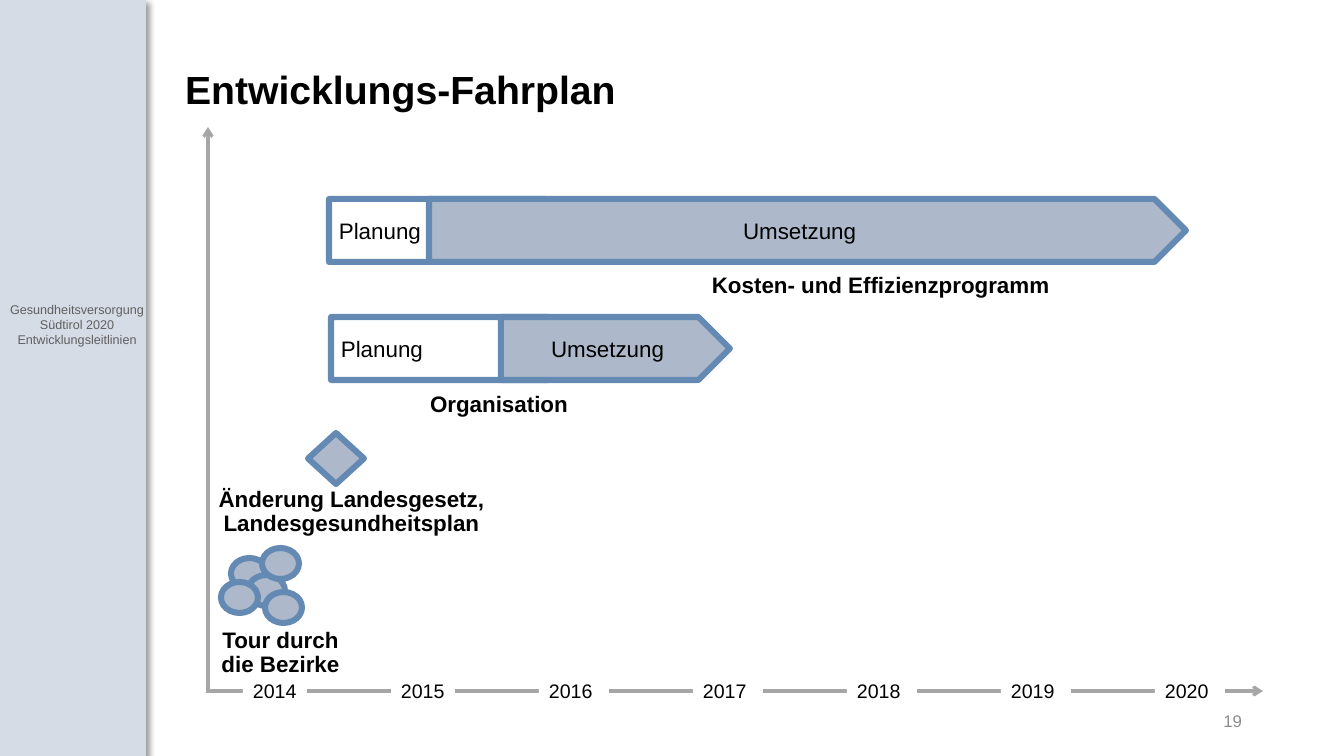
"""Build the roadmap slide of the development guidelines."""
from dataclasses import dataclass
from typing import Optional

from lxml.etree import SubElement
from pptx import Presentation
from pptx.dml.color import RGBColor
from pptx.enum.shapes import MSO_CONNECTOR, MSO_SHAPE as Geometry
from pptx.enum.text import MSO_ANCHOR as Anchor, MSO_AUTO_SIZE as AutoSize, PP_ALIGN as Align
from pptx.oxml.ns import qn
from pptx.shapes.autoshape import Shape
from pptx.shapes.shapetree import SlideShapes
from pptx.util import Emu, Pt

EMU_PER_PX = 12192000 / 1344


@dataclass(frozen=True)
class Theme:
    font: str = "Arial"
    ink: str = "000000"
    paper: str = "FFFFFF"
    sidebar: str = "D6DCE5"
    sidebar_ink: str = "5F5F5F"
    page_ink: str = "8C8C8C"
    axis: str = "A6A6A6"
    fill: str = "ADB9CA"
    outline: str = "648AB4"
    title_size: int = 28
    body_size: int = 16
    year_size: int = 14
    page_size: int = 12
    sidebar_size: int = 9
    outline_width: float = 4.33
    axis_width: float = 2.25
    label_leading: int = 17


THEME = Theme()


@dataclass(frozen=True)
class Box:
    left: int
    top: int
    width: int
    height: int

    def emu(self) -> tuple[Emu, ...]:
        return tuple(map(px, (self.left, self.top, self.width, self.height)))


@dataclass(frozen=True)
class Phase:
    text: str
    box: Box
    fill: Optional[str]
    align: Align


@dataclass(frozen=True)
class Label:
    text: str
    box: Box
    align: Align = Align.CENTER


@dataclass(frozen=True)
class Axis:
    tip: tuple[int, int]
    origin: tuple[int, int]


PHASES = [
    Phase("Planung", Box(329, 199, 248, 63), None, Align.LEFT),
    Phase("Umsetzung", Box(429, 199, 757, 63), THEME.fill, Align.CENTER),
    Phase("Planung", Box(331, 317, 248, 63), None, Align.LEFT),
    Phase("Umsetzung", Box(501, 317, 229, 63), THEME.fill, Align.CENTER),
]
LABELS = [
    Label("Kosten- und Effizienzprogramm", Box(702, 269, 375, 34), Align.LEFT),
    Label("Organisation", Box(335, 388, 328, 34)),
    Label("Änderung Landesgesetz, Landesgesundheitsplan", Box(168, 483, 367, 57)),
    Label("Tour durch die Bezirke", Box(202, 624, 157, 57)),
]
AXES = [Axis((208, 127), (208, 693)), Axis((1263, 691), (208, 691))]
TOUR_STOPS = [(231, 558), (248, 575), (265, 592), (221, 582), (262, 548)]
LAW_CHANGE = Box(308, 433, 56, 51)
YEARS = range(2014, 2021)


def px(length: int) -> Emu:
    return Emu(round(length * EMU_PER_PX))


def color(code: str) -> RGBColor:
    return RGBColor.from_string(code)


def write(target: Shape, text: str, size: int, ink: str = THEME.ink, bold: bool = False,
          align: Align = Align.LEFT, anchor: Anchor = Anchor.TOP,
          leading: Optional[float] = None) -> None:
    frame = target.text_frame
    frame.text = text
    frame.word_wrap = True
    frame.vertical_anchor = anchor
    for paragraph in frame.paragraphs:
        paragraph.alignment = align
        if leading is not None:
            paragraph.line_spacing = leading
        for run in paragraph.runs:
            run.font.name = THEME.font
            run.font.size = Pt(size)
            run.font.bold = bold
            run.font.color.rgb = color(ink)


def add_figure(shapes: SlideShapes, geometry: Geometry, box: Box, fill: Optional[str],
               outline: Optional[str] = THEME.outline) -> Shape:
    figure = shapes.add_shape(geometry, *box.emu())
    figure.shadow.inherit = False
    if fill:
        figure.fill.solid()
        figure.fill.fore_color.rgb = color(fill)
    else:
        figure.fill.background()
    if outline:
        figure.line.color.rgb = color(outline)
        figure.line.width = Pt(THEME.outline_width)
    else:
        figure.line.fill.background()
    return figure


def add_sidebar(shapes: SlideShapes) -> None:
    sidebar = add_figure(shapes, Geometry.RECTANGLE, Box(0, 0, 146, 756), THEME.sidebar, None)
    effects = sidebar.element.spPr.find(qn("a:effectLst"))
    shadow = SubElement(effects, qn("a:outerShdw"), blurRad=str(Pt(4)), dist=str(Pt(3)),
                        dir="2700000", algn="tl", rotWithShape="0")
    tint = SubElement(shadow, qn("a:srgbClr"), val=THEME.ink)
    SubElement(tint, qn("a:alpha"), val="40000")
    caption = shapes.add_textbox(*Box(0, 297, 154, 71).emu())
    write(caption, "Gesundheitsversorgung Südtirol 2020\nEntwicklungsleitlinien",
          THEME.sidebar_size, THEME.sidebar_ink, align=Align.CENTER)
    caption.text_frame.margin_left = caption.text_frame.margin_right = px(5)


def add_axis(shapes: SlideShapes, axis: Axis) -> None:
    line = shapes.add_connector(MSO_CONNECTOR.STRAIGHT, *map(px, axis.tip + axis.origin))
    line.line.color.rgb = color(THEME.axis)
    line.line.width = Pt(THEME.axis_width)
    properties = line.element.spPr
    SubElement(properties.find(qn("a:ln")), qn("a:headEnd"), type="arrow")
    SubElement(properties, qn("a:effectLst"))


def add_year(shapes: SlideShapes, index: int, year: int) -> None:
    left = 243 + 148 * min(index, 2) + 154 * max(index - 2, 0)
    box = Box(left, 674, 64 if index < 2 else 70, 34)
    tick = add_figure(shapes, Geometry.RECTANGLE, box, THEME.paper, None)
    write(tick, str(year), THEME.year_size)
    tick.text_frame.word_wrap = False
    tick.text_frame.auto_size = AutoSize.SHAPE_TO_FIT_TEXT


def add_phase(shapes: SlideShapes, phase: Phase) -> None:
    arrow = add_figure(shapes, Geometry.PENTAGON, phase.box, phase.fill)
    write(arrow, phase.text, THEME.body_size, align=phase.align, anchor=Anchor.MIDDLE)


def add_label(shapes: SlideShapes, label: Label) -> None:
    caption = shapes.add_textbox(*label.box.emu())
    write(caption, label.text, THEME.body_size, bold=True, align=label.align,
          leading=Pt(THEME.label_leading))


def main() -> None:
    deck = Presentation()
    deck.slide_width, deck.slide_height = px(1344), px(756)
    slide = deck.slides.add_slide(deck.slide_layouts[5])
    shapes = slide.shapes
    add_sidebar(shapes)

    title = shapes.title
    title.left, title.top, title.width, title.height = Box(175, 40, 1077, 104).emu()
    write(title, "Entwicklungs-Fahrplan", THEME.title_size, bold=True,
          anchor=Anchor.MIDDLE, leading=0.9)
    page_number = shapes.add_textbox(*Box(950, 701, 302, 40).emu())
    write(page_number, "19", THEME.page_size, THEME.page_ink, align=Align.RIGHT,
          anchor=Anchor.MIDDLE)

    for axis in AXES:
        add_axis(shapes, axis)
    for index, year in enumerate(YEARS):
        add_year(shapes, index, year)
    tour = shapes.add_group_shape()
    for left, top in TOUR_STOPS:
        add_figure(tour.shapes, Geometry.OVAL, Box(left, top, 37, 31), THEME.fill)
    add_figure(shapes, Geometry.DIAMOND, LAW_CHANGE, THEME.fill)
    for phase in PHASES:
        add_phase(shapes, phase)
    for label in LABELS:
        add_label(shapes, label)
    deck.save("out.pptx")


if __name__ == "__main__":
    main()
